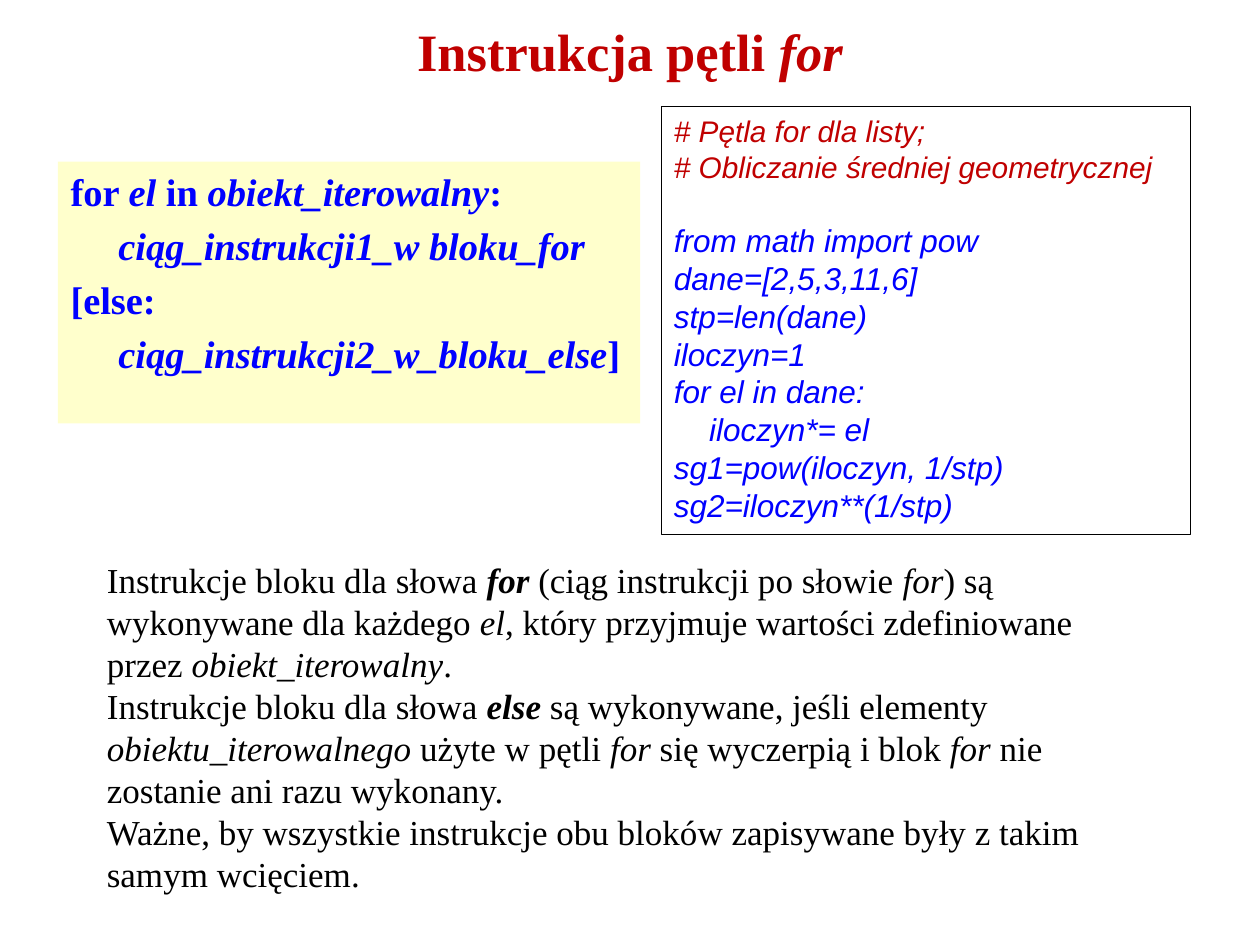
from pptx import Presentation
from pptx.dml.color import RGBColor
from pptx.enum.shapes import MSO_SHAPE
from pptx.enum.text import MSO_ANCHOR, MSO_AUTO_SIZE, PP_ALIGN
from pptx.oxml.xmlchemy import OxmlElement
from pptx.util import Inches, Pt

RECTANGLE = MSO_SHAPE.RECTANGLE
TOP, MIDDLE = MSO_ANCHOR.TOP, MSO_ANCHOR.MIDDLE
NO_FIT = MSO_AUTO_SIZE.NONE
LEFT, CENTER = PP_ALIGN.LEFT, PP_ALIGN.CENTER

RED = RGBColor(0xC0, 0x00, 0x00)
BLUE = RGBColor(0x00, 0x00, 0xFF)
BLACK = RGBColor(0x00, 0x00, 0x00)
WHITE = RGBColor(0xFF, 0xFF, 0xFF)
CREAM = RGBColor(0xFF, 0xFF, 0xCC)

SERIF, SANS = "Times New Roman", "Arial"
WIDTH, HEIGHT = Inches(10), Inches(7.5)

# Shares of the slide's size: left, top, width, height
TITLE_BOX = (0, 0.023, 1, 0.07)
SYNTAX_BOX = (0.046, 0.171, 0.462, 0.277)
EXAMPLE_BOX = (0.525, 0.113, 0.42, 0.453)
PROSE_BOX = (0.075, 0.583, 0.833, 0.372)

HEADING = {"name": SERIF, "size": Pt(30), "bold": True, "color": RED}
SYNTAX = {"name": SERIF, "size": Pt(22), "bold": True, "color": BLUE}
PROSE = {"name": SERIF, "size": Pt(20), "bold": False, "color": BLACK}
COMMENT = {"name": SANS, "size": Pt(17), "italic": True, "color": RED}
CODE = {"name": SANS, "size": Pt(18), "italic": True, "color": BLUE}
ITALIC = {"italic": True}
STRONG = {"italic": True, "bold": True}

# A line is a list of parts; a part is plain text or (text, extra format).
TITLE_LINE = ["Instrukcja pętli ", ("for", ITALIC)]
# Each syntax line: is it indented, and its parts
SYNTAX_LINES = [
    (False, ["for ", ("el ", ITALIC), "in ", ("obiekt_iterowalny", ITALIC), ":"]),
    (True, [("ciąg_instrukcji1_w bloku_for", ITALIC)]),
    (False, ["[else:"]),
    (True, [("ciąg_instrukcji2_w_bloku_else", ITALIC), "]"]),
]
COMMENT_LINES = ["# Pętla for dla listy;", "# Obliczanie średniej geometrycznej"]
CODE_LINES = [
    "from math import pow",
    "dane=[2,5,3,11,6]",
    "stp=len(dane)",
    "iloczyn=1",
    "for el in dane:",
    "\tiloczyn*= el",
    "sg1=pow(iloczyn, 1/stp)",
    "sg2=iloczyn**(1/stp)",
]
PROSE_LINES = [
    ["Instrukcje bloku dla słowa ", ("for", STRONG), " (ciąg instrukcji po słowie ",
     ("for", ITALIC), ") są wykonywane dla każdego ", ("el", ITALIC),
     ", który przyjmuje wartości zdefiniowane przez ",
     ("obiekt_iterowalny", ITALIC), "."],
    ["Instrukcje bloku dla słowa ", ("else ", STRONG),
     "są wykonywane, jeśli elementy ", ("obiektu_iterowalnego", ITALIC),
     " użyte w pętli ", ("for", ITALIC), " się wyczerpią i blok ",
     ("for", ITALIC), " nie zostanie ani razu wykonany."],
    ["Ważne, by wszystkie instrukcje obu bloków zapisywane były z takim "
     "samym wcięciem."],
]


def to_lengths(box):
    left, top, width, height = box
    return (round(left * WIDTH), round(top * HEIGHT),
            round(width * WIDTH), round(height * HEIGHT))


def place(placeholder, box):
    (placeholder.left, placeholder.top,
     placeholder.width, placeholder.height) = to_lengths(box)


def prepare_frame(shape, anchor):
    frame = shape.text_frame
    frame.word_wrap = True
    frame.auto_size = NO_FIT
    frame.vertical_anchor = anchor
    return frame


def add_lines(frame, lines, style):
    """Write one paragraph per line, using the empty first one if present."""
    paragraphs = []
    for parts in lines:
        first = frame.paragraphs[0]
        paragraph = frame.add_paragraph() if first.runs else first
        for part in parts:
            text, extra = (part, {}) if isinstance(part, str) else part
            run = paragraph.add_run()
            run.text = text
            for key, value in {**style, **extra}.items():
                if key == "color":
                    run.font.color.rgb = value
                else:
                    setattr(run.font, key, value)
        paragraphs.append(paragraph)
    return paragraphs


def indent(paragraph, margin):
    properties = paragraph._p.get_or_add_pPr()
    properties.set("marL", str(margin))
    properties.set("indent", "0")
    return properties


def fill_title(title, box):
    place(title, box)
    [heading] = add_lines(prepare_frame(title, MIDDLE), [TITLE_LINE], HEADING)
    heading.alignment = CENTER
    heading.line_spacing = 0.9


def fill_syntax(body, box):
    place(body, box)
    body.fill.solid()
    body.fill.fore_color.rgb = CREAM
    lines = [parts for _, parts in SYNTAX_LINES]
    paragraphs = add_lines(prepare_frame(body, TOP), lines, SYNTAX)
    for paragraph, (nested, _) in zip(paragraphs, SYNTAX_LINES):
        properties = indent(paragraph, Inches(0.38) if nested else 0)
        properties.append(OxmlElement("a:buNone"))


def add_prose(slide, box):
    prose = slide.shapes.add_textbox(*to_lengths(box))
    add_lines(prepare_frame(prose, MIDDLE), PROSE_LINES, PROSE)


def add_example(slide, box):
    example = slide.shapes.add_shape(RECTANGLE, *to_lengths(box))
    example.shadow.inherit = False
    example.fill.solid()
    example.fill.fore_color.rgb = WHITE
    example.line.color.rgb = BLACK
    example.line.width = Pt(0.75)
    frame = prepare_frame(example, TOP)
    comments = add_lines(frame, [[line] for line in COMMENT_LINES], COMMENT)
    code = add_lines(frame, [[line.strip()] for line in CODE_LINES], CODE)
    for paragraph in comments + code:
        paragraph.alignment = LEFT
    for paragraph, line in zip(code, CODE_LINES):
        if line.startswith("\t"):
            indent(paragraph, Inches(0.28))
    code[0].space_before = Pt(21)


def main():
    presentation = Presentation()
    presentation.slide_width, presentation.slide_height = WIDTH, HEIGHT
    slide = presentation.slides.add_slide(presentation.slide_layouts[1])
    fill_title(slide.shapes.title, TITLE_BOX)
    fill_syntax(slide.placeholders[1], SYNTAX_BOX)
    add_prose(slide, PROSE_BOX)
    add_example(slide, EXAMPLE_BOX)
    presentation.save("out.pptx")


if __name__ == "__main__":
    main()
